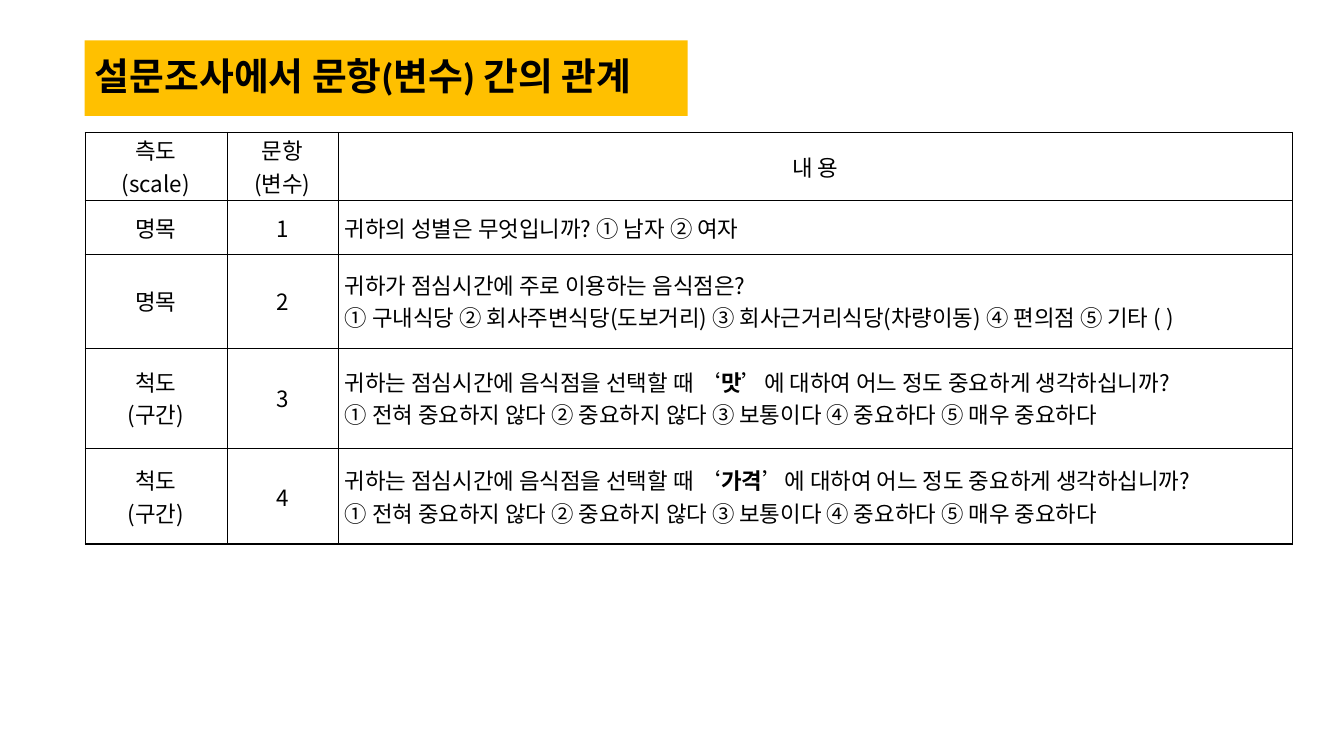
from lxml.etree import SubElement
from pptx import Presentation
from pptx.dml.color import RGBColor
from pptx.enum.text import MSO_ANCHOR, MSO_AUTO_SIZE, PP_ALIGN
from pptx.oxml import parse_xml
from pptx.oxml.ns import nsdecls, qn
from pptx.util import Inches, Pt

COLORS = {"text": "000000", "border": "000000", "banner": "FFC000"}
KOREAN_FONT = "Noto Sans CJK KR"
HEADING = "설문조사에서 문항(변수) 간의 관계"
IMPORTANCE_QUESTION = (
    "귀하는 점심시간에 음식점을 선택할 때 ‘*{}*’에 대하여 어느 정도 중요하게 생각하십니까?\n"
    "① 전혀 중요하지 않다 ② 중요하지 않다 ③ 보통이다 ④ 중요하다 ⑤ 매우 중요하다"
)
SURVEY_ROWS = [
    ("측도\n(scale)", "문항\n(변수)", "내 용"),
    ("명목", "1", "귀하의 성별은 무엇입니까? ① 남자 ② 여자"),
    ("명목", "2", "귀하가 점심시간에 주로 이용하는 음식점은?\n"
     "① 구내식당 ② 회사주변식당(도보거리) ③ 회사근거리식당(차량이동) ④ 편의점 ⑤ 기타 ( )"),
    ("척도\n(구간)", "3", IMPORTANCE_QUESTION.format("맛")),
    ("척도\n(구간)", "4", IMPORTANCE_QUESTION.format("가격")),
]
COLUMN_WIDTHS = (1.41, 1.1, 9.47)
ROW_HEIGHTS = (0.61, 0.53, 0.93, 1, 0.95)


def write_text(frame, text, size=16, font=KOREAN_FONT, bold=False,
               align=PP_ALIGN.CENTER, line_spacing=None):
    for index, line in enumerate(text.split("\n")):
        paragraph = frame.add_paragraph() if index else frame.paragraphs[0]
        paragraph.alignment = align
        if line_spacing:
            paragraph.line_spacing = line_spacing
        for position, part in enumerate(line.split("*")):
            run = paragraph.add_run()
            run.text = part
            run.font.size = Pt(size)
            run.font.bold = bold or position % 2 == 1
            run.font.color.rgb = RGBColor.from_string(COLORS["text"])
            run.font.name = font
            east_asian = SubElement(run.font._element, qn("a:ea"))
            east_asian.set("typeface", KOREAN_FONT)


def set_borders(cell, bottom_width):
    properties = cell._tc.get_or_add_tcPr()
    widths = {"lnL": 0.28, "lnR": 0.28, "lnT": 0.28, "lnB": bottom_width}
    for index, (side, width) in enumerate(widths.items()):
        properties.insert(index, parse_xml(
            f'<a:{side} {nsdecls("a")} w="{Pt(width)}"><a:solidFill>'
            f'<a:srgbClr val="{COLORS["border"]}"/></a:solidFill></a:{side}>'))


def add_heading(slide, left, top, width, height):
    heading = slide.shapes.title
    heading.left, heading.top = Inches(left), Inches(top)
    heading.width, heading.height = Inches(width), Inches(height)
    heading.fill.solid()
    heading.fill.fore_color.rgb = RGBColor.from_string(COLORS["banner"])
    frame = heading.text_frame
    frame.auto_size = MSO_AUTO_SIZE.NONE
    frame.word_wrap = True
    frame.vertical_anchor = MSO_ANCHOR.MIDDLE
    write_text(frame, HEADING, size=27, font="Calibri", bold=True,
               align=PP_ALIGN.LEFT, line_spacing=0.9)


def add_survey_table(slide, left, top, width, height):
    survey = slide.shapes.add_table(
        len(SURVEY_ROWS), len(COLUMN_WIDTHS),
        Inches(left), Inches(top), Inches(width), Inches(height)).table
    survey.first_row = survey.horz_banding = False
    for column, share in zip(survey.columns, COLUMN_WIDTHS):
        column.width = Inches(width * share / sum(COLUMN_WIDTHS))
    for row, share in zip(survey.rows, ROW_HEIGHTS):
        row.height = Inches(height * share / sum(ROW_HEIGHTS))
    last_row = len(SURVEY_ROWS) - 1
    for row_index, texts in enumerate(SURVEY_ROWS):
        for column_index, text in enumerate(texts):
            cell = survey.cell(row_index, column_index)
            cell.vertical_anchor = MSO_ANCHOR.MIDDLE
            cell.margin_left = cell.margin_right = Inches(0.07)
            cell.margin_top = cell.margin_bottom = Inches(0.02)
            cell.fill.background()
            set_borders(cell, 1.98 if row_index == last_row else 0.28)
            is_question = row_index > 0 and column_index == 2
            write_text(cell.text_frame, text,
                       align=PP_ALIGN.JUSTIFY if is_question else PP_ALIGN.CENTER)


def main():
    presentation = Presentation()
    presentation.slide_width = Inches(13.33)
    presentation.slide_height = Inches(7.5)
    slide = presentation.slides.add_slide(presentation.slide_layouts[5])
    add_heading(slide, 0.84, 0.4, 5.98, 0.75)
    add_survey_table(slide, 0.84, 1.31, 11.98, 4.02)
    presentation.save("out.pptx")


if __name__ == "__main__":
    main()
